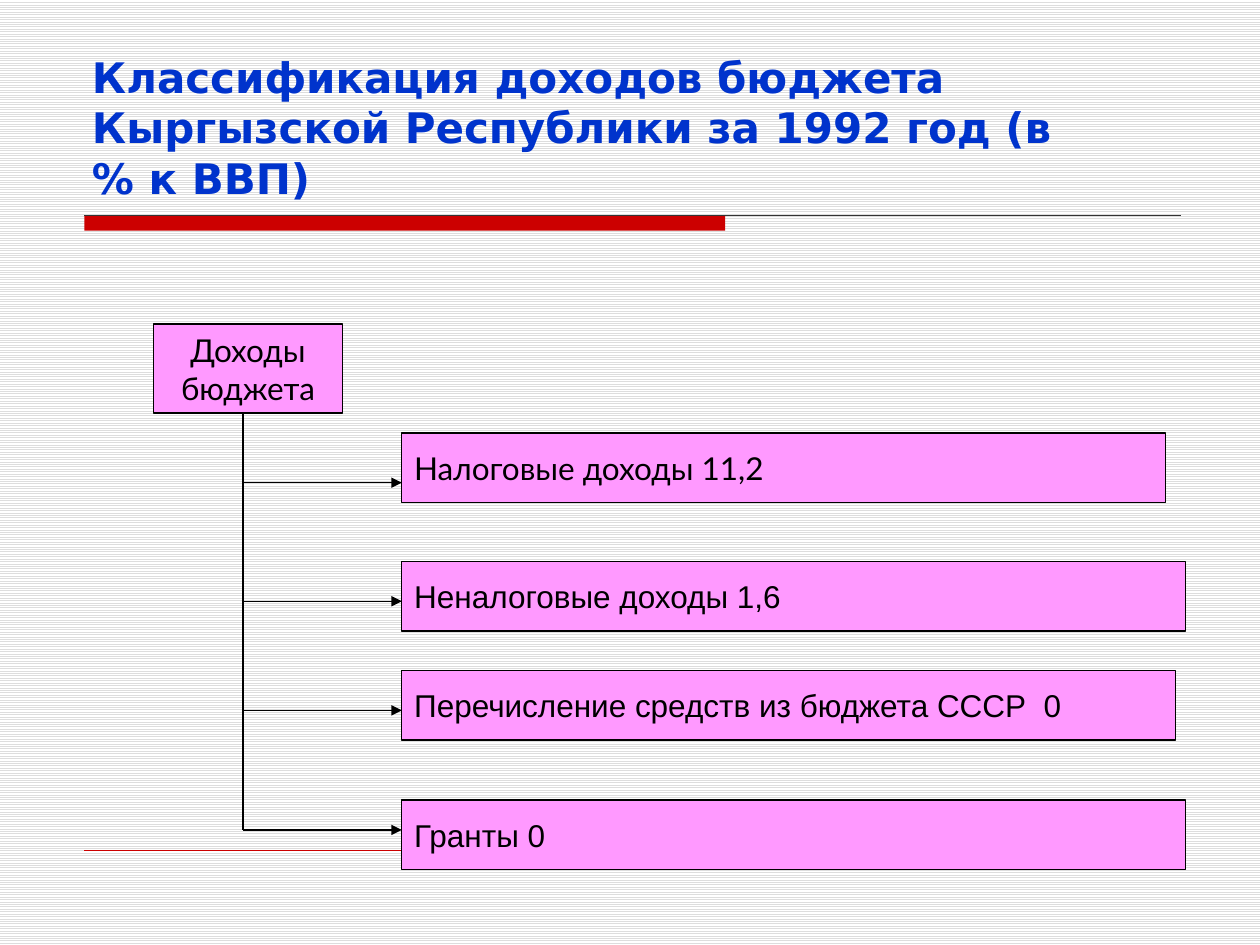
from pptx import Presentation
from pptx.dml.color import RGBColor
from pptx.enum.dml import MSO_PATTERN
from pptx.enum.shapes import MSO_CONNECTOR, MSO_SHAPE
from pptx.enum.text import MSO_ANCHOR, PP_ALIGN
from pptx.oxml.ns import qn
from pptx.util import Cm, Pt
from lxml.etree import SubElement

BLUE = RGBColor(0x00, 0x33, 0xCC)
RED = RGBColor(0xCC, 0x00, 0x00)
PINK = RGBColor(0xFF, 0x99, 0xFF)
STRIPE = RGBColor(0xDD, 0xDD, 0xDD)
WHITE = RGBColor(0xFF, 0xFF, 0xFF)
BLACK = RGBColor(0x00, 0x00, 0x00)
DARK = RGBColor(0x33, 0x33, 0x33)

# Content; lengths in centimetres
TITLE = "Классификация доходов бюджета Кыргызской Республики за 1992 год (в % к ВВП)"
ROOT = ["Доходы", "бюджета"]
# text, font, box top, box width, arrow height on the slide
INCOMES = [
    ("Налоговые доходы 11,2", "Lato", 8.73, 15.4, 9.73),
    ("Неналоговые доходы 1,6", "Arial", 11.32, 15.8, 12.12),
    ("Перечисление средств из бюджета СССР  0", "Arial", 13.52, 15.6, 14.32),
    ("Гранты 0", "Arial", 16.13, 15.8, 16.73),
]
ROOT_BOX = (3.1, 6.53, 3.8, 1.8)
TRUNK_X, BOX_X, BOX_HEIGHT = 4.9, 8.1, 1.4
RULE_X, RULE_Y = 1.7, 4.34


def add_line(slide, start, end, color=BLACK, width=0.75, arrow=False):
    line = slide.shapes.add_connector(
        MSO_CONNECTOR.STRAIGHT, *(Cm(value) for value in (*start, *end)))
    line.line.color.rgb = color
    line.line.width = Pt(width)
    properties = line._element.spPr
    if arrow:
        SubElement(properties.find(qn("a:ln")), qn("a:tailEnd"), type="triangle")
    SubElement(properties, qn("a:effectLst"))


def add_rectangle(slide, box, color):
    shape = slide.shapes.add_shape(MSO_SHAPE.RECTANGLE, *(Cm(value) for value in box))
    shape.shadow.inherit = False
    shape.fill.solid()
    shape.fill.fore_color.rgb = color
    return shape


def add_box(slide, box, lines, font, alignment):
    shape = add_rectangle(slide, box, PINK)
    shape.line.color.rgb = BLACK
    shape.line.width = Pt(0.75)
    frame = shape.text_frame
    frame.word_wrap = True
    frame.vertical_anchor = MSO_ANCHOR.MIDDLE
    frame.text = "\n".join(lines)
    for paragraph in frame.paragraphs:
        paragraph.alignment = alignment
        paragraph.font.name = font
        paragraph.font.size = Pt(18)
        paragraph.font.color.rgb = BLACK


presentation = Presentation()
presentation.slide_width, presentation.slide_height = Cm(25.4), Cm(19.05)
slide = presentation.slides.add_slide(presentation.slide_layouts[5])

# Striped background
background = slide.background.fill
background.patterned()
background.pattern = MSO_PATTERN.LIGHT_HORIZONTAL
background.fore_color.rgb = STRIPE
background.back_color.rgb = WHITE

# Rules under the title and at the foot
bar = add_rectangle(slide, (RULE_X, RULE_Y, 12.92, 0.31), RED)
bar.line.fill.background()
add_line(slide, (RULE_X, RULE_Y), (23.8, RULE_Y), DARK)
add_line(slide, (RULE_X, 17.15), (23.7, 17.15), RED, 0.25)

# Title
title = slide.shapes.title
title.left, title.top, title.width, title.height = Cm(1.6), Cm(2.13), Cm(20.98), Cm(2.08)
title.text_frame.text = TITLE
title.text_frame.word_wrap = True
title.text_frame.vertical_anchor = MSO_ANCHOR.BOTTOM
heading = title.text_frame.paragraphs[0]
heading.alignment = PP_ALIGN.LEFT
heading.font.name = "DejaVu Sans"
heading.font.size = Pt(24)
heading.font.bold = True
heading.font.color.rgb = BLUE

# Root box and trunk down to the last arrow
add_box(slide, ROOT_BOX, ROOT, "Lato", PP_ALIGN.CENTER)
add_line(slide, (TRUNK_X, ROOT_BOX[1] + ROOT_BOX[3]), (TRUNK_X, INCOMES[-1][-1]))

# Kinds of income, each with its arrow
for text, font, top, width, arrow_y in INCOMES:
    add_line(slide, (TRUNK_X, arrow_y), (BOX_X, arrow_y), arrow=True)
    add_box(slide, (BOX_X, top, width, BOX_HEIGHT), [text], font, PP_ALIGN.LEFT)

presentation.save("out.pptx")
